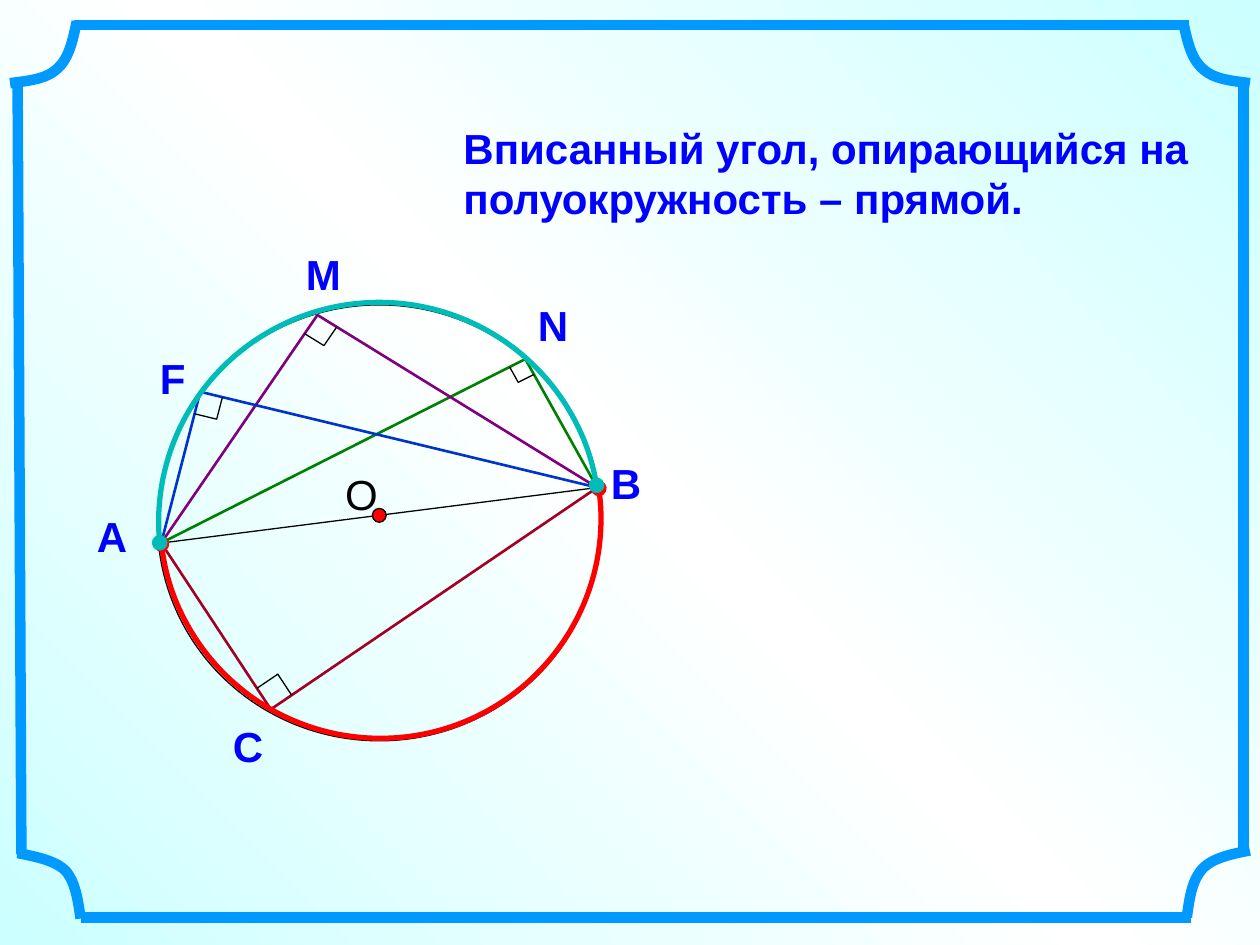
import math
from copy import deepcopy
from dataclasses import dataclass

from lxml import etree
from pptx import Presentation
from pptx import util as u
from pptx.dml.color import RGBColor
from pptx.enum import shapes, text
from pptx.oxml.ns import qn

COLUMNS, ROWS = 10, 7.5
CELL = u.Inches(1)


@dataclass(frozen=True)
class Theme:
    font: str = "Arial"
    size: int = 24
    ink: str = "000000"
    label: str = "0000FF"
    frame: str = "0099FF"
    red: str = "FF0000"
    teal: str = "00BCB8"
    background: tuple = ("CCFFFF", "FFFFFF", "CCFFFF")
    thin: float = 0.75
    chord: float = 1.5
    arc: float = 3
    border: float = 6


THEME = Theme()

A, B = (1.28, 4.31), (4.74, 3.87)
# name, vertex, label position, chord colour, side of the right-angle mark
INSCRIBED_ANGLES = [
    ("N", (4.17, 2.85), (4.17, 2.33), "008000", 0.14),
    ("M", (2.52, 2.5), (2.33, 1.92), "800080", 0.18),
    ("С", (2.15, 5.63), (1.75, 5.67), "A50021", 0.2),
    ("F", (1.59, 3.11), (1.17, 2.75), "0033CC", 0.18),
]
FRAME_SIDES = [
    ((0.59, 0.2), (9.44, 0.2)),
    ((0.64, 7.28), (9.45, 7.28)),
    ((9.87, 0.66), (9.87, 6.78)),
    ((0.14, 0.66), (0.17, 6.78)),
]
# each corner is two Bezier curves that share their middle point
FRAME_CORNERS = [
    [(0.14, 6.77), (0.29, 6.8), (0.44, 6.83), (0.52, 6.91),
     (0.6, 7), (0.62, 7.15), (0.64, 7.29)],
    [(9.92, 6.75), (9.77, 6.78), (9.62, 6.81), (9.54, 6.9),
     (9.46, 6.99), (9.44, 7.13), (9.42, 7.28)],
    [(9.39, 0.17), (9.42, 0.31), (9.45, 0.46), (9.54, 0.54),
     (9.63, 0.63), (9.77, 0.64), (9.92, 0.66)],
    [(0.61, 0.17), (0.58, 0.31), (0.55, 0.46), (0.46, 0.54),
     (0.37, 0.63), (0.23, 0.64), (0.08, 0.66)],
]


def grid(*values):
    return [u.Emu(round(value * CELL)) for value in values]


def set_line(shape, color, width):
    shape.line.color.rgb = RGBColor.from_string(color)
    shape.line.width = u.Pt(width)


def paint_background(slide):
    fill = slide.background.fill
    fill.gradient()
    stops = slide.element.find(".//" + qn("a:gsLst"))
    stops.append(deepcopy(stops[0]))
    for index, (stop, color) in enumerate(zip(fill.gradient_stops, THEME.background)):
        stop.color.rgb = RGBColor.from_string(color)
        stop.position = index / 2
    fill.gradient_angle = 45


def add_segment(slide, start, end, color, width):
    connector = slide.shapes.add_connector(
        shapes.MSO_CONNECTOR.STRAIGHT, *grid(*start, *end))
    set_line(connector, color, width)
    etree.SubElement(connector.element.spPr, qn("a:effectLst"))


def add_outline(slide, points, color, width):
    """Draw an open, unfilled line through the points."""
    start, *others = [grid(*point) for point in points]
    builder = slide.shapes.build_freeform(*start)
    builder.add_line_segments(others, close=False)
    shape = builder.convert_to_shape()
    shape.shadow.inherit = False
    shape.fill.background()
    set_line(shape, color, width)


def bezier_points(controls, steps=12):
    points = [controls[0]]
    for first in range(0, len(controls) - 1, 3):
        curve = controls[first:first + 4]
        for step in range(1, steps + 1):
            t = step / steps
            weights = [math.comb(3, k) * t ** k * (1 - t) ** (3 - k) for k in range(4)]
            points.append(tuple(
                sum(weight * point[axis] for weight, point in zip(weights, curve))
                for axis in (0, 1)))
    return points


def add_round(slide, preset, center, radii, color, width, fill=None):
    (x, y), (rx, ry) = center, radii
    shape = slide.shapes.add_shape(preset, *grid(x - rx, y - ry, 2 * rx, 2 * ry))
    shape.shadow.inherit = False
    if fill:
        shape.fill.solid()
        shape.fill.fore_color.rgb = RGBColor.from_string(fill)
    else:
        shape.fill.background()
    set_line(shape, color, width)
    return shape


def add_semicircle(slide, center, start, end, color):
    """Draw an arc clockwise from start to end degrees, with a dot at each end."""
    shape = add_round(slide, shapes.MSO_SHAPE.ARC, center, (1.75, 1.74), color, THEME.arc)
    for index, degrees in enumerate((start, end)):
        shape.adjustments[index] = degrees * 0.6
    for tag in ("a:headEnd", "a:tailEnd"):
        etree.SubElement(shape.line._get_or_add_ln(), qn(tag), type="oval")


def add_text(slide, content, position, size=(0.55, 0.5), color=THEME.label,
             bold=True, wrap=True):
    frame = slide.shapes.add_textbox(*grid(*position, *size)).text_frame
    frame.word_wrap = wrap
    frame.auto_size = text.MSO_AUTO_SIZE.SHAPE_TO_FIT_TEXT
    paragraph = frame.paragraphs[0]
    paragraph.text = content
    font = paragraph.font
    font.name, font.size, font.bold = THEME.font, u.Pt(THEME.size), bold
    font.color.rgb = RGBColor.from_string(color)


def along(start, end, distance):
    ratio = distance / math.dist(start, end)
    return tuple(s + (e - s) * ratio for s, e in zip(start, end))


def add_right_angle(slide, vertex, side):
    first, last = along(vertex, A, side), along(vertex, B, side)
    middle = tuple(f + l - v for f, l, v in zip(first, last, vertex))
    add_outline(slide, [first, middle, last], THEME.ink, THEME.thin)


def add_frame(slide):
    for start, end in FRAME_SIDES:
        add_segment(slide, start, end, THEME.frame, THEME.border)
    for controls in FRAME_CORNERS:
        add_outline(slide, bezier_points(controls), THEME.frame, THEME.border)


def add_circle_drawing(slide):
    oval = shapes.MSO_SHAPE.OVAL
    add_segment(slide, A, B, THEME.ink, THEME.thin)
    add_text(slide, "О", (2.64, 3.67), (0.46, 0.5), THEME.ink, bold=False, wrap=False)
    add_round(slide, oval, (3.01, 4.15), (1.76, 1.73), THEME.ink, THEME.thin)
    add_round(slide, oval, (3.01, 4.09), (0.055, 0.055), THEME.ink, THEME.thin, THEME.red)
    add_text(slide, "А", (0.67, 4))
    add_text(slide, "В", (4.75, 3.58))
    for name, vertex, position, color, side in INSCRIBED_ANGLES:
        add_outline(slide, [A, vertex, B], color, THEME.chord)
        add_text(slide, name, position)
        add_right_angle(slide, vertex, side)
    add_semicircle(slide, (3.02, 4.12), 352, 173.5, THEME.red)
    add_semicircle(slide, (3.01, 4.14), 174.5, 350.5, THEME.teal)


def main():
    presentation = Presentation()
    presentation.slide_width, presentation.slide_height = grid(COLUMNS, ROWS)
    slide = presentation.slides.add_slide(presentation.slide_layouts[6])
    paint_background(slide)
    add_frame(slide)
    add_text(slide, "Вписанный угол, опирающийся на полуокружность – прямой.",
             (3.58, 0.92), (6, 0.9))
    add_circle_drawing(slide)
    presentation.save("out.pptx")


if __name__ == "__main__":
    main()
